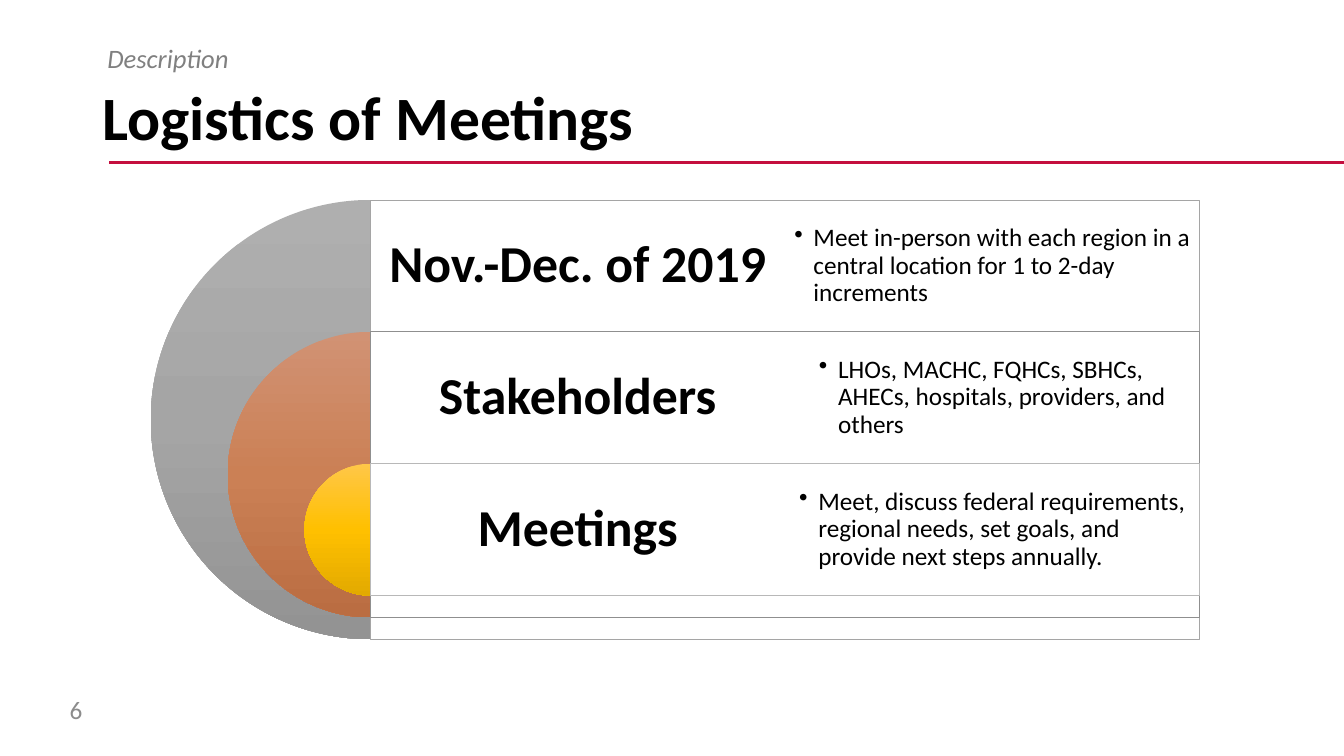
import dataclasses

import pptx
import pptx.dml.color
import pptx.enum.shapes
import pptx.enum.text
import pptx.oxml
import pptx.oxml.ns
import pptx.util
import copy
import lxml.etree

COLUMNS, ROWS = 160, 90
CELL = pptx.util.Inches(1 / 12)
MIDDLE = pptx.enum.text.MSO_ANCHOR.MIDDLE
CENTER = pptx.enum.text.PP_ALIGN.CENTER
qn = pptx.oxml.ns.qn


@dataclasses.dataclass(frozen=True)
class Theme:
    font: str = "Calibri"
    title_size: int = 44
    label_size: int = 37
    kicker_size: int = 19
    body_size: int = 18
    text: str = "000000"
    kicker: str = "808080"
    number: str = "8C8C8C"
    rule: str = "C40E3E"
    panel: str = "FFFFFF"
    panel_lines: tuple = ("A5A5A5", "8F8F8F", "B8B8B8")
    gradients: tuple = (
        ("AFAFAF", "A5A5A5", "939393"),
        ("D19274", "CB8055", "BA6D42"),
        ("FFC748", "FFC000", "E3AA00"),
    )


def rgb(value):
    return pptx.dml.color.RGBColor.from_string(value)


def cells(*counts):
    return [round(count * CELL) for count in counts]


class SlideBuilder:
    def __init__(self, slide, theme):
        self.slide = slide
        self.theme = theme

    def rule(self, left, top, right):
        line = self.slide.shapes.add_connector(
            pptx.enum.shapes.MSO_CONNECTOR.STRAIGHT, *cells(left, top, right, top))
        line.line.color.rgb = rgb(self.theme.rule)
        line.line.width = pptx.util.Pt(2.25)
        lxml.etree.SubElement(line._element.spPr, qn("a:effectLst"))

    def text(self, box, content, size, color=None, bold=False, italic=False,
             anchor=MIDDLE, align=None, inset=None, spacing=0.9, bullet=False):
        frame = self.slide.shapes.add_textbox(*cells(*box)).text_frame
        frame.word_wrap = True
        frame.vertical_anchor = anchor
        if inset is not None:
            margin = pptx.util.Inches(inset)
            frame.margin_left = frame.margin_right = margin
            frame.margin_top = frame.margin_bottom = margin
        paragraph = frame.paragraphs[0]
        paragraph.line_spacing = spacing
        if align is not None:
            paragraph.alignment = align
        if bullet:
            self.hang_bullet(frame, paragraph)
        run = paragraph.add_run()
        run.text = content
        run.font.name = self.theme.font
        run.font.size = pptx.util.Pt(size)
        run.font.bold = bold
        run.font.italic = italic
        run.font.color.rgb = rgb(color or self.theme.text)

    def hang_bullet(self, frame, paragraph):
        """Indent the bullet and centre the text block in its box."""
        frame._txBody.bodyPr.set("anchorCtr", "1")
        properties = paragraph._p.get_or_add_pPr()
        indent = pptx.util.Inches(0.19)
        properties.set("marL", str(indent))
        properties.set("indent", str(-indent))
        lxml.etree.SubElement(properties, qn("a:buChar"), char="•")

    def half_disc(self, center, top, diameter, colors):
        disc = self.slide.shapes.add_shape(
            pptx.enum.shapes.MSO_SHAPE.PIE,
            *cells(center - diameter / 2, top, diameter, diameter))
        disc.shadow.inherit = False
        # Angles are 5400000 and 16200000, in units of 100000
        disc.adjustments[0] = 54
        disc.adjustments[1] = 162
        disc.line.fill.background()
        disc.fill.gradient()
        disc.fill.gradient_angle = 270
        stop_list = disc._element.spPr.find(".//" + qn("a:gsLst"))
        stop_list.insert(1, copy.deepcopy(stop_list[0]))
        for stop, color, position in zip(disc.fill.gradient_stops, colors, (0, 0.5, 1)):
            stop.color.rgb = rgb(color)
            stop.position = position

    def panel(self, box, line_color):
        panel = self.slide.shapes.add_shape(
            pptx.enum.shapes.MSO_SHAPE.RECTANGLE, *cells(*box))
        panel.shadow.inherit = False
        panel.fill.solid()
        panel.fill.fore_color.rgb = rgb(self.theme.panel)
        color = panel._element.spPr.find(qn("a:solidFill"))[0]
        lxml.etree.SubElement(color, qn("a:alpha"), val="90000")
        panel.line.color.rgb = rgb(line_color)
        panel.line.width = pptx.util.Pt(0.5)

    def nested_rows(self, rows, left, top, width, row_height, diameter, step):
        """Draw each row as a half disc, a panel, a label and a bullet."""
        half = width / 2
        for index, (label, detail) in enumerate(rows):
            row_top = top + index * row_height
            size = diameter - index * step
            self.half_disc(left, row_top, size, self.theme.gradients[index])
            self.panel((left, row_top, width, size), self.theme.panel_lines[index])
            self.text((left, row_top, half, row_height), label, self.theme.label_size,
                      bold=True, align=CENTER, inset=0.15)
            self.text((left + half, row_top, half, row_height), detail,
                      self.theme.body_size, inset=0.07, bullet=True)


def main():
    theme = Theme()
    presentation = pptx.Presentation()
    presentation.slide_width = COLUMNS * CELL
    presentation.slide_height = ROWS * CELL
    slide = presentation.slides.add_slide(presentation.slide_layouts[6])
    builder = SlideBuilder(slide, theme)

    builder.rule(13, 19.3, COLUMNS)
    builder.text((11, 7.8, 138, 13.1), "Logistics of Meetings", theme.title_size, bold=True)
    builder.nested_rows(
        [
            ("Nov.-Dec. of 2019",
             "Meet in-person with each region in a central location for 1 to 2-day increments"),
            ("Stakeholders",
             "LHOs, MACHC, FQHCs, SBHCs, AHECs, hospitals, providers, and others"),
            ("Meetings",
             "Meet, discuss federal requirements, regional needs, set goals, "
             "and provide next steps annually."),
        ],
        left=44.1, top=23.8, width=98.7, row_height=15.7, diameter=52.3, step=18.3)
    builder.text((7.1, 82.1, 7.1, 4.8), "6", theme.body_size, theme.number, spacing=1.0)
    builder.text((11.6, 4.8, 137.4, 4.6), "Description", theme.kicker_size, theme.kicker,
                 italic=True, anchor=pptx.enum.text.MSO_ANCHOR.TOP)
    presentation.save("out.pptx")


if __name__ == "__main__":
    main()
